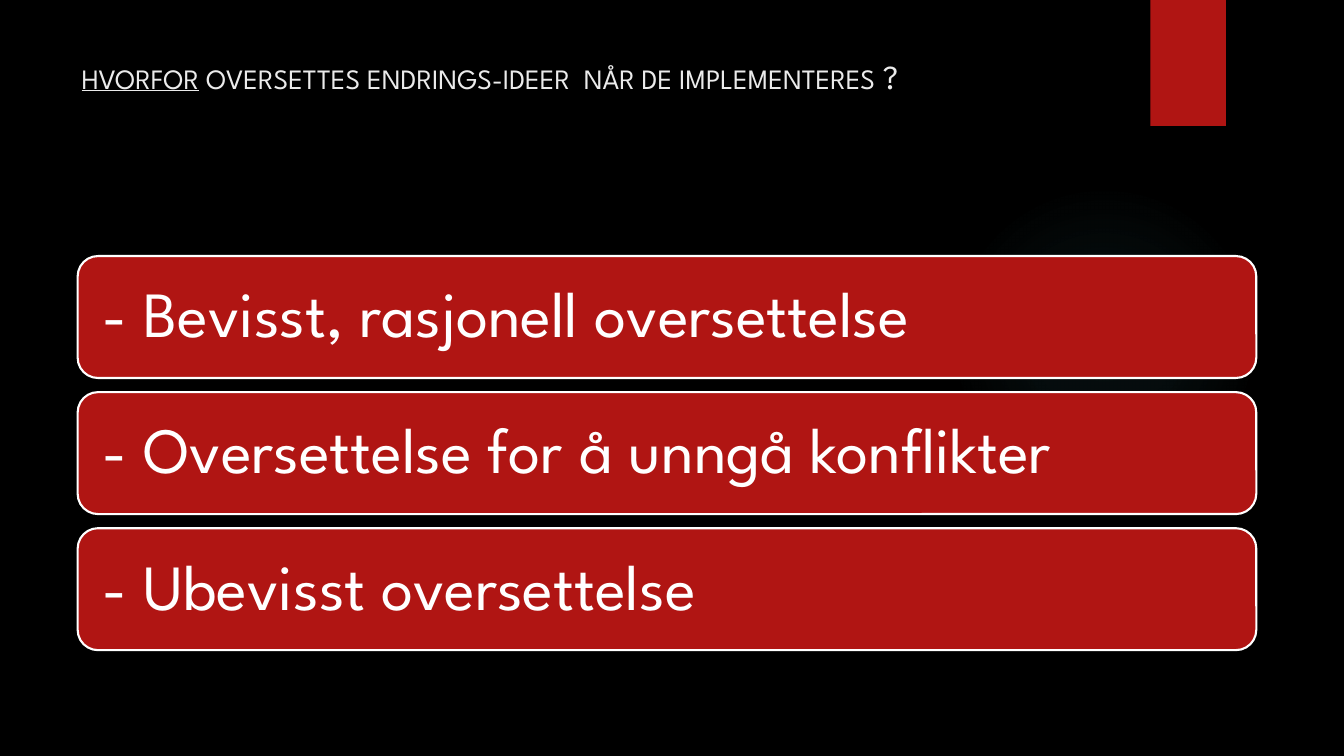
from lxml import etree
from pptx import Presentation
from pptx.dml.color import RGBColor
from pptx.enum.shapes import MSO_SHAPE as Preset
from pptx.enum.text import MSO_ANCHOR as Anchor, PP_ALIGN as Align
from pptx.oxml import parse_xml
from pptx.oxml.ns import nsdecls, qn
from pptx.util import Inches, Pt

COLORS = {
    "background": "000000",
    "red": "B01513",
    "white": "FFFFFF",
    "title": "EBEBEB",
    "glow": "50B9C1",
}
FONT = "League Spartan"
REASONS = [
    "- Bevisst, rasjonell oversettelse",
    "- Oversettelse for å unngå konflikter",
    "- Ubevisst oversettelse",
]
GLOW_STOPS = [(0, 7), (36, 6), (69, 0)]


def color(name):
    return RGBColor.from_string(COLORS[name])


def add_text(para, text, size, tint, underline=False):
    span = para.add_run()
    span.text = text
    span.font.name = FONT
    span.font.size = Pt(size)
    span.font.color.rgb = color(tint)
    span.font.underline = underline


def add_box(page, preset, left, top, width, height, fill="red", line=None):
    box = page.shapes.add_shape(
        preset, Inches(left), Inches(top), Inches(width), Inches(height)
    )
    box.shadow.inherit = False
    box.fill.solid()
    box.fill.fore_color.rgb = color(fill)
    if line:
        box.line.color.rgb = color(line)
        box.line.width = Pt(1.5)
    else:
        box.line.fill.background()
    return box


def add_glow(page):
    glow = add_box(page, Preset.OVAL, 9.41, 1.83, 3.08, 3.08, fill="glow")
    gradient = parse_xml(f"<a:gradFill {nsdecls('a')}/>")
    stops = etree.SubElement(gradient, qn("a:gsLst"))
    for position, opacity in GLOW_STOPS:
        stop = etree.SubElement(stops, qn("a:gs"), pos=str(position * 1000))
        tint = etree.SubElement(stop, qn("a:srgbClr"), val=COLORS["glow"])
        etree.SubElement(tint, qn("a:alpha"), val=str(opacity * 1000))
    circle = etree.SubElement(gradient, qn("a:path"), path="circle")
    center = {side: "50000" for side in "ltrb"}
    etree.SubElement(circle, qn("a:fillToRect"), **center)
    properties = glow.element.spPr
    properties.replace(properties.find(qn("a:solidFill")), gradient)


def add_title(page):
    title = page.shapes.title
    title.left, title.top = Inches(0.71), Inches(0.5)
    title.width, title.height = Inches(10.29), Inches(1.53)
    frame = title.text_frame
    frame.word_wrap = True
    frame.vertical_anchor = Anchor.TOP
    para = frame.paragraphs[0]
    para.alignment = Align.LEFT
    add_text(para, "HVORFOR", 20, "title", underline=True)
    add_text(para, " OVERSETTES ENDRINGS-IDEER  NÅR DE IMPLEMENTERES ", 20, "title")
    add_text(para, "?", 24, "title")


def add_reason(page, text, top):
    box = add_box(
        page, Preset.ROUNDED_RECTANGLE, 0.77, top, 11.69, 1.21, line="white"
    )
    frame = box.text_frame
    frame.word_wrap = True
    frame.vertical_anchor = Anchor.MIDDLE
    frame.margin_left = frame.margin_right = Inches(0.19)
    frame.margin_top = frame.margin_bottom = Inches(0.19)
    para = frame.paragraphs[0]
    para.alignment = Align.LEFT
    para.line_spacing = 0.9
    add_text(para, text, 46, "white")


def main():
    deck = Presentation()
    deck.slide_width, deck.slide_height = Inches(13.33), Inches(7.5)
    page = deck.slides.add_slide(deck.slide_layouts[5])
    page.background.fill.solid()
    page.background.fill.fore_color.rgb = color("background")
    add_glow(page)
    add_box(page, Preset.RECTANGLE, 11.41, 0, 0.75, 1.25)
    add_title(page)
    for index, reason in enumerate(REASONS):
        add_reason(page, reason, 2.54 + 1.35 * index)
    deck.save("out.pptx")


if __name__ == "__main__":
    main()
